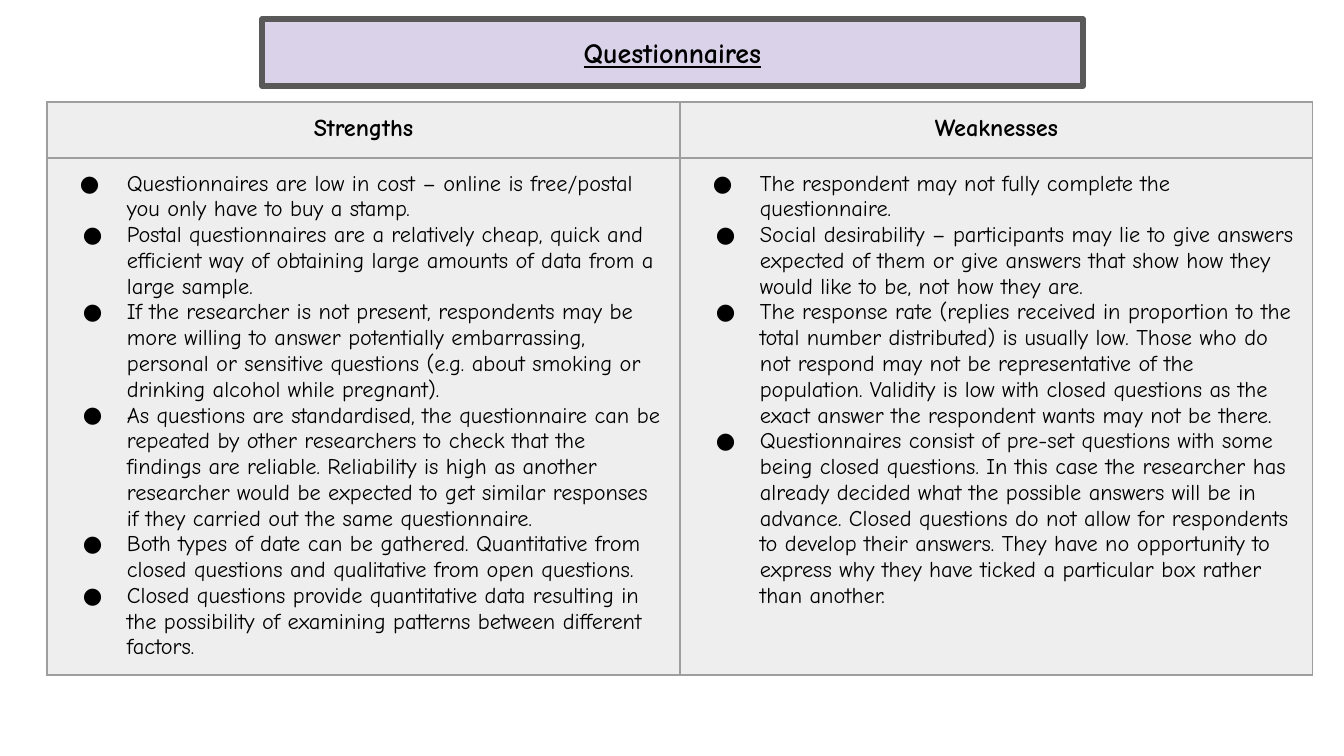
from lxml import etree
from pptx import Presentation, util as u
from pptx.dml.color import RGBColor
from pptx.enum import text
from pptx.oxml.ns import qn

TITLE = "Questionnaires"
COLUMNS = {
    "Strengths": [
        "Questionnaires are low in cost – online is free/postal you only have to buy a stamp.",
        "Postal questionnaires are a relatively cheap, quick and efficient way of obtaining "
        "large amounts of data from a large sample.",
        "If the researcher is not present, respondents may be more willing to answer potentially "
        "embarrassing, personal or sensitive questions (e.g. about smoking or drinking alcohol "
        "while pregnant).",
        "As questions are standardised, the questionnaire can be repeated by other researchers to "
        "check that the findings are reliable. Reliability is high as another researcher would be "
        "expected to get similar responses if they carried out the same questionnaire.",
        "Both types of date can be gathered. Quantitative from closed questions and qualitative "
        "from open questions.",
        "Closed questions provide quantitative data resulting in the possibility of examining "
        "patterns between different factors.",
    ],
    "Weaknesses": [
        "The respondent may not fully complete the questionnaire.",
        "Social desirability – participants may lie to give answers expected of them or give "
        "answers that show how they would like to be, not how they are.",
        "The response rate (replies received in proportion to the total number distributed) is "
        "usually low. Those who do not respond may not be representative of the population. "
        "Validity is low with closed questions as the exact answer the respondent wants may not "
        "be there.",
        "Questionnaires consist of pre-set questions with some being closed questions. In this "
        "case the researcher has already decided what the possible answers will be in advance. "
        "Closed questions do not allow for respondents to develop their answers. They have no "
        "opportunity to express why they have ticked a particular box rather than another.",
    ],
}
COLORS = {"text": "000000", "title": "D9D2E9", "frame": "595959",
          "cell": "EEEEEE", "border": "9E9E9E"}
FONT = "Comic Neue"
TITLE_BOX = (262, 19, 821, 67)
TABLE_LEFT, TABLE_TOP, COL_WIDTH = 47, 102, 633
ROW_HEIGHTS = (56, 517)
INSET = 13
BULLET_MARGIN, FIRST_INDENT, NEXT_INDENT = 67, 47, 44


def px(n):
    return u.Emu(round(n * 914400 / 134.4))


def rgb(name):
    return RGBColor.from_string(COLORS[name])


def add_run(p, words, size, bold=False, underline=False):
    r = p.add_run()
    r.text = words
    f = r.font
    f.name, f.size, f.bold, f.underline = FONT, u.Pt(size), bold, underline
    f.color.rgb = rgb("text")


def add_bullet(p, indent):
    pPr = p._p.get_or_add_pPr()
    pPr.set("marL", str(px(BULLET_MARGIN)))
    pPr.set("indent", str(-px(indent)))
    color = etree.SubElement(pPr, qn("a:buClr"))
    etree.SubElement(color, qn("a:srgbClr"), val=COLORS["text"])
    etree.SubElement(pPr, qn("a:buFont"), typeface=FONT)
    etree.SubElement(pPr, qn("a:buChar"), char="●")


def set_insets(o):
    o.margin_left = o.margin_right = o.margin_top = o.margin_bottom = px(INSET)


def style_cell(cell):
    set_insets(cell)
    tcPr = cell._tc.get_or_add_tcPr()
    for side in ("lnL", "lnR", "lnT", "lnB"):
        ln = etree.SubElement(tcPr, qn(f"a:{side}"), w=str(u.Pt(0.75)))
        fill = etree.SubElement(ln, qn("a:solidFill"))
        etree.SubElement(fill, qn("a:srgbClr"), val=COLORS["border"])
    cell.fill.solid()
    cell.fill.fore_color.rgb = rgb("cell")


def add_title(s):
    sp = s.shapes.title
    sp.left, sp.top, sp.width, sp.height = map(px, TITLE_BOX)
    sp.fill.solid()
    sp.fill.fore_color.rgb = rgb("title")
    sp.line.color.rgb = rgb("frame")
    sp.line.width = u.Pt(3)
    tf = sp.text_frame
    tf.auto_size = text.MSO_AUTO_SIZE.NONE
    tf.vertical_anchor = text.MSO_ANCHOR.MIDDLE
    set_insets(tf)
    p = tf.paragraphs[0]
    p.alignment = text.PP_ALIGN.CENTER
    add_run(p, TITLE, 15, bold=True, underline=True)


def add_comparison(s):
    table = s.shapes.add_table(
        len(ROW_HEIGHTS), len(COLUMNS), px(TABLE_LEFT), px(TABLE_TOP),
        px(COL_WIDTH * len(COLUMNS)), px(sum(ROW_HEIGHTS))).table
    table.first_row = table.horz_banding = False
    for row, height in zip(table.rows, ROW_HEIGHTS):
        row.height = px(height)
    for col, (heading, points) in enumerate(COLUMNS.items()):
        table.columns[col].width = px(COL_WIDTH)
        head, body = table.cell(0, col), table.cell(1, col)
        style_cell(head)
        style_cell(body)
        p = head.text_frame.paragraphs[0]
        p.alignment = text.PP_ALIGN.CENTER
        add_run(p, heading, 13, bold=True)
        tf = body.text_frame
        for i, point in enumerate(points):
            p = tf.add_paragraph() if i else tf.paragraphs[0]
            add_bullet(p, NEXT_INDENT if i else FIRST_INDENT)
            add_run(p, point, 12)


def main():
    prs = Presentation()
    prs.slide_width, prs.slide_height = px(1344), px(756)
    s = prs.slides.add_slide(prs.slide_layouts[5])
    add_title(s)
    add_comparison(s)
    prs.save("out.pptx")


if __name__ == "__main__":
    main()
